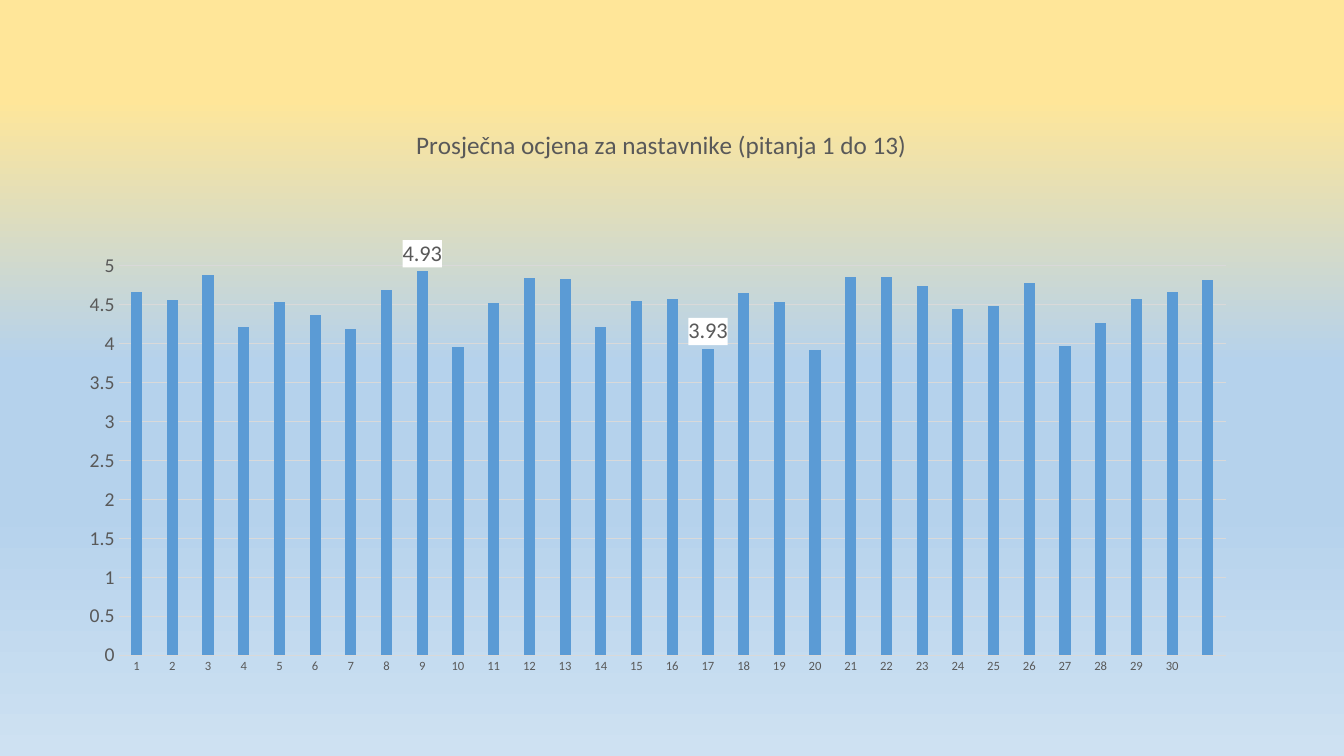
from lxml import etree
from pptx import Presentation, util as u
from pptx.chart.data import CategoryChartData
from pptx.dml.color import RGBColor
from pptx.enum import chart as kinds
from pptx.oxml import parse_xml
from pptx.oxml.ns import nsdecls, qn

SCORES = [4.66, 4.56, 4.88, 4.22, 4.54, 4.37, 4.19, 4.69, 4.93, 3.96, 4.52,
          4.85, 4.83, 4.21, 4.55, 4.58, 3.93, 4.65, 4.54, 3.92, 4.86, 4.86,
          4.74, 4.44, 4.48, 4.78, 3.97, 4.26, 4.58, 4.67, 4.82]
TEACHERS = [str(number) for number in range(1, 31)]
LABELLED = (8, 16)
SKY = ((13, "FFE699"), (48, "B5D2EC"), (67, "B5D2EC"), (100, "CEE1F2"))


def colour(code):
    return RGBColor.from_string(code)


class Slide:
    """Holds the style and the current page."""
    face, ink, rule, bar = "Calibri", "595959", "D9D9D9", "5B9BD5"

    def __init__(self, deck):
        self.page = deck.slides.add_slide(deck.slide_layouts[6])

    def style(self, font, size, ink=None):
        font.name = self.face
        font.size = u.Pt(size)
        font.bold = False
        font.color.rgb = colour(ink or self.ink)

    def add_text(self, frame, words, **style):
        span = frame.paragraphs[0].add_run()
        span.text = words
        self.style(span.font, **style)

    def line(self, target):
        target.color.rgb = colour(self.rule)
        target.width = u.Pt(0.75)

    def background(self, stops):
        fill = self.page.background.fill
        fill.gradient()
        fill.gradient_angle = 270
        stop_list = next(self.page.element.iter(qn("a:gsLst")))
        for old in list(stop_list):
            stop_list.remove(old)
        for percent, code in stops:
            stop = etree.SubElement(stop_list, qn("a:gs"), pos=str(percent * 1000))
            etree.SubElement(stop, qn("a:srgbClr"), val=code)

    def columns(self, left, top, width, height, title):
        data = CategoryChartData()
        data.categories = TEACHERS
        data.add_series("Series 1", SCORES)
        chart = self.page.shapes.add_chart(
            kinds.XL_CHART_TYPE.COLUMN_CLUSTERED, u.Cm(left), u.Cm(top),
            u.Cm(width), u.Cm(height), data).chart
        self.style(chart.font, 10, "000000")
        chart.has_legend = False
        chart.has_title = True
        self.add_text(chart.chart_title.text_frame, title, size=18)
        chart.chart_title.include_in_layout = False

        # Columns
        plot = chart.plots[0]
        plot.gap_width, plot.overlap = 219, -27
        plot.vary_by_categories = False
        series = plot.series[0]
        series.format.fill.solid()
        series.format.fill.fore_color.rgb = colour(self.bar)
        self.axes(chart)
        self.place_plot(chart, x=0.032, y=0.275, w=0.955, h=0.669)
        self.point_labels(series)

    def axes(self, chart):
        for axis, size in ((chart.category_axis, 9), (chart.value_axis, 14)):
            axis.major_tick_mark = axis.minor_tick_mark = kinds.XL_TICK_MARK.NONE
            self.style(axis.tick_labels.font, size)
        self.line(chart.category_axis.format.line)
        scale = chart.value_axis
        scale.minimum_scale, scale.maximum_scale, scale.major_unit = 0, 5, 0.5
        scale.format.line.fill.background()
        scale.has_major_gridlines = True
        self.line(scale.major_gridlines.format.line)

    def place_plot(self, chart, **area):
        plot_area = next(chart.element.iter(qn("c:plotArea"))) if hasattr(
            chart, "element") else chart._chartSpace.chart.plotArea
        for old in plot_area.findall(qn("c:layout")):
            plot_area.remove(old)
        layout = etree.Element(qn("c:layout"))
        manual = etree.SubElement(layout, qn("c:manualLayout"))
        settings = {"layoutTarget": "inner", "xMode": "edge", "yMode": "edge", **area}
        for name, value in settings.items():
            etree.SubElement(manual, qn("c:" + name), val=str(value))
        plot_area.insert(0, layout)

    def point_labels(self, series):
        for index in LABELLED:
            label = series.points[index].data_label
            self.style(label.font, 16)
            label.position = kinds.XL_LABEL_POSITION.OUTSIDE_END
        series.data_labels.show_value = False
        # White boxes behind the values
        for item in series.data_labels._element.findall(qn("c:dLbl")):
            item.find(qn("c:txPr")).addprevious(parse_xml(
                f'<c:spPr {nsdecls("c", "a")}><a:solidFill>'
                '<a:srgbClr val="FFFFFF"/></a:solidFill></c:spPr>'))


def main():
    deck = Presentation()
    deck.slide_width, deck.slide_height = u.Cm(33.87), u.Cm(19.05)
    slide = Slide(deck)
    slide.background(SKY)
    slide.columns(2.06, 2.67, 29.21, 14.66,
                  title="Prosječna ocjena za nastavnike (pitanja 1 do 13)")
    deck.save("out.pptx")


if __name__ == "__main__":
    main()
